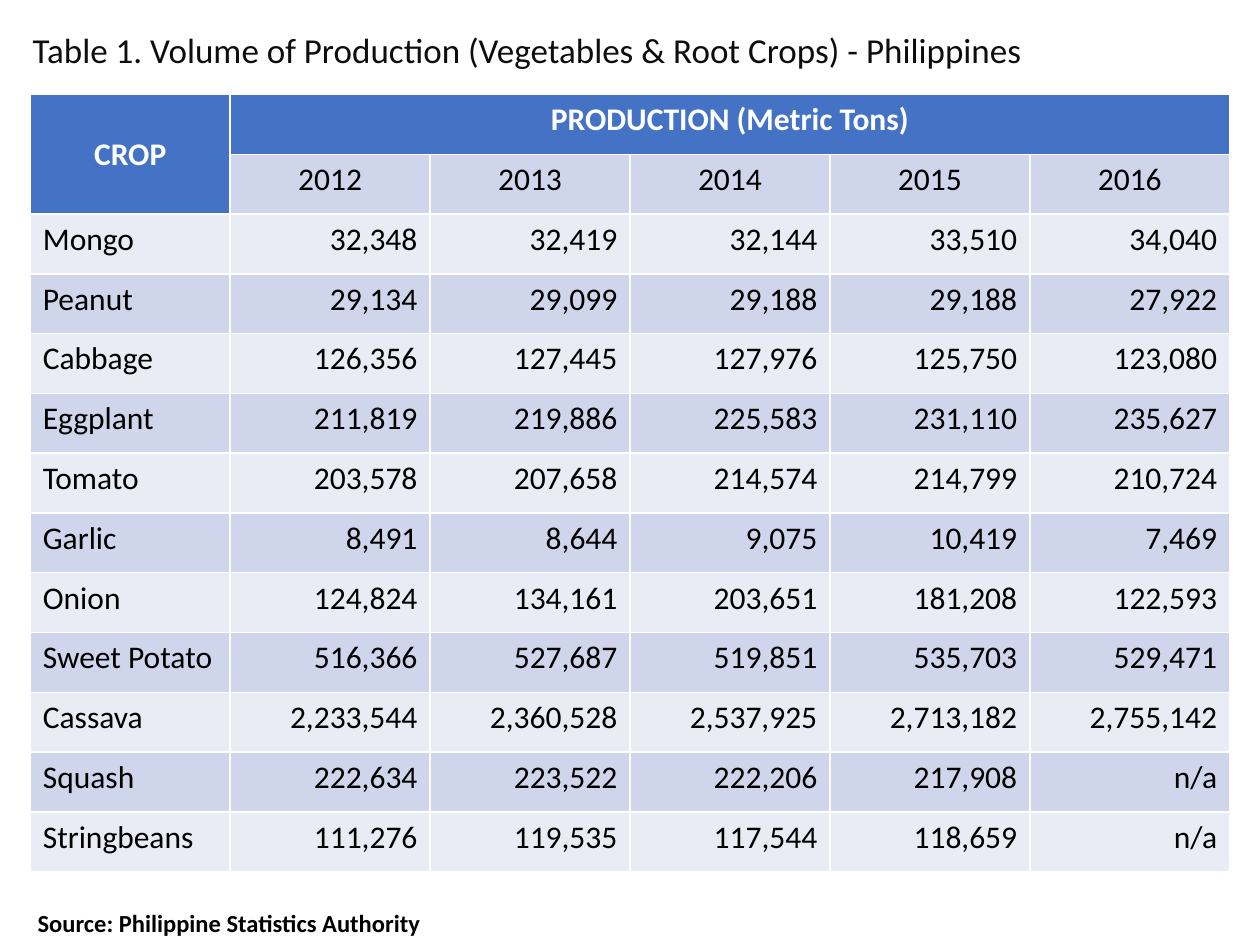
"""Build a slide with a table of Philippine vegetable and root crop production."""
from dataclasses import dataclass

from pptx import Presentation
from pptx.dml.color import RGBColor
from pptx.enum.text import MSO_ANCHOR, PP_ALIGN
from pptx.util import Inches, Pt

LEFT, CENTER, RIGHT = PP_ALIGN.LEFT, PP_ALIGN.CENTER, PP_ALIGN.RIGHT
TOP, MIDDLE = MSO_ANCHOR.TOP, MSO_ANCHOR.MIDDLE
FONT = "Calibri"
BLACK, WHITE, TITLE_INK = "000000", "FFFFFF", "0D0D0D"
HEADER_BLUE, BAND_DARK, BAND_LIGHT = "4472C4", "CFD5EA", "E9EBF5"
HEADER_ROWS = 2
YEARS = ["2012", "2013", "2014", "2015", "2016"]


@dataclass
class Crop:
    """A crop and its yearly production in metric tons."""
    name: str
    tons: list[str]


CROPS = [
    Crop("Mongo", ["32,348", "32,419", "32,144", "33,510", "34,040"]),
    Crop("Peanut", ["29,134", "29,099", "29,188", "29,188", "27,922"]),
    Crop("Cabbage", ["126,356", "127,445", "127,976", "125,750", "123,080"]),
    Crop("Eggplant", ["211,819", "219,886", "225,583", "231,110", "235,627"]),
    Crop("Tomato", ["203,578", "207,658", "214,574", "214,799", "210,724"]),
    Crop("Garlic", ["8,491", "8,644", "9,075", "10,419", "7,469"]),
    Crop("Onion", ["124,824", "134,161", "203,651", "181,208", "122,593"]),
    Crop("Sweet Potato", ["516,366", "527,687", "519,851", "535,703", "529,471"]),
    Crop("Cassava", ["2,233,544", "2,360,528", "2,537,925", "2,713,182", "2,755,142"]),
    Crop("Squash", ["222,634", "223,522", "222,206", "217,908", "n/a"]),
    Crop("Stringbeans", ["111,276", "119,535", "117,544", "118,659", "n/a"]),
]


def rgb(color: str) -> RGBColor:
    """Turn a hex string into a colour."""
    return RGBColor.from_string(color)


def write(frame, text: str, size: int, color: str, bold=False, align=LEFT) -> None:
    """Put one formatted run into the first paragraph of a text frame."""
    paragraph = frame.paragraphs[0]
    paragraph.alignment = align
    run = paragraph.add_run()
    run.text = text
    run.font.name = FONT
    run.font.size = Pt(size)
    run.font.bold = bold
    run.font.color.rgb = rgb(color)


def fill_cell(cell, text: str, fill: str, align=LEFT, ink=BLACK, bold=False, anchor=TOP) -> None:
    """Fill one table cell with a colour and its text."""
    cell.fill.solid()
    cell.fill.fore_color.rgb = rgb(fill)
    cell.vertical_anchor = anchor
    write(cell.text_frame, text, 18, ink, bold, align)


def add_title(slide) -> None:
    """Place and write the title."""
    title = slide.shapes.title
    title.left, title.top = Inches(0.16), Inches(0.08)
    title.width, title.height = Inches(9.02), Inches(0.67)
    frame = title.text_frame
    frame.word_wrap = True
    frame.vertical_anchor = MIDDLE
    write(frame, "Table 1. Volume of Production (Vegetables & Root Crops) - Philippines",
          20, TITLE_INK)
    frame.paragraphs[0].line_spacing = 0.9


def add_production_table(slide) -> None:
    """Draw the production table with its two header rows."""
    table = slide.shapes.add_table(
        len(CROPS) + HEADER_ROWS, len(YEARS) + 1,
        Inches(0.24), Inches(0.75), Inches(9.52), Inches(6.17)).table
    table.cell(0, 0).merge(table.cell(1, 0))
    table.cell(0, 1).merge(table.cell(0, len(YEARS)))
    fill_cell(table.cell(0, 0), "CROP", HEADER_BLUE, CENTER, WHITE, True, MIDDLE)
    fill_cell(table.cell(0, 1), "PRODUCTION (Metric Tons)", HEADER_BLUE, CENTER, WHITE, True)
    for column, year in enumerate(YEARS, 1):
        fill_cell(table.cell(1, column), year, BAND_DARK, CENTER)
    for row, crop in enumerate(CROPS, HEADER_ROWS):
        band = BAND_DARK if row % 2 else BAND_LIGHT
        fill_cell(table.cell(row, 0), crop.name, band)
        for column, tons in enumerate(crop.tons, 1):
            fill_cell(table.cell(row, column), tons, band, RIGHT)


def add_source(slide) -> None:
    """Write the source line below the table."""
    source = slide.shapes.add_textbox(Inches(0.2), Inches(7.16), Inches(4.68), Inches(0.34))
    source.text_frame.word_wrap = True
    write(source.text_frame, "Source: Philippine Statistics Authority", 14, BLACK, True)


def main() -> None:
    """Build and save the presentation."""
    presentation = Presentation()
    presentation.slide_width, presentation.slide_height = Inches(10), Inches(7.5)
    slide = presentation.slides.add_slide(presentation.slide_layouts[5])
    add_title(slide)
    add_production_table(slide)
    add_source(slide)
    presentation.save("out.pptx")


if __name__ == "__main__":
    main()
